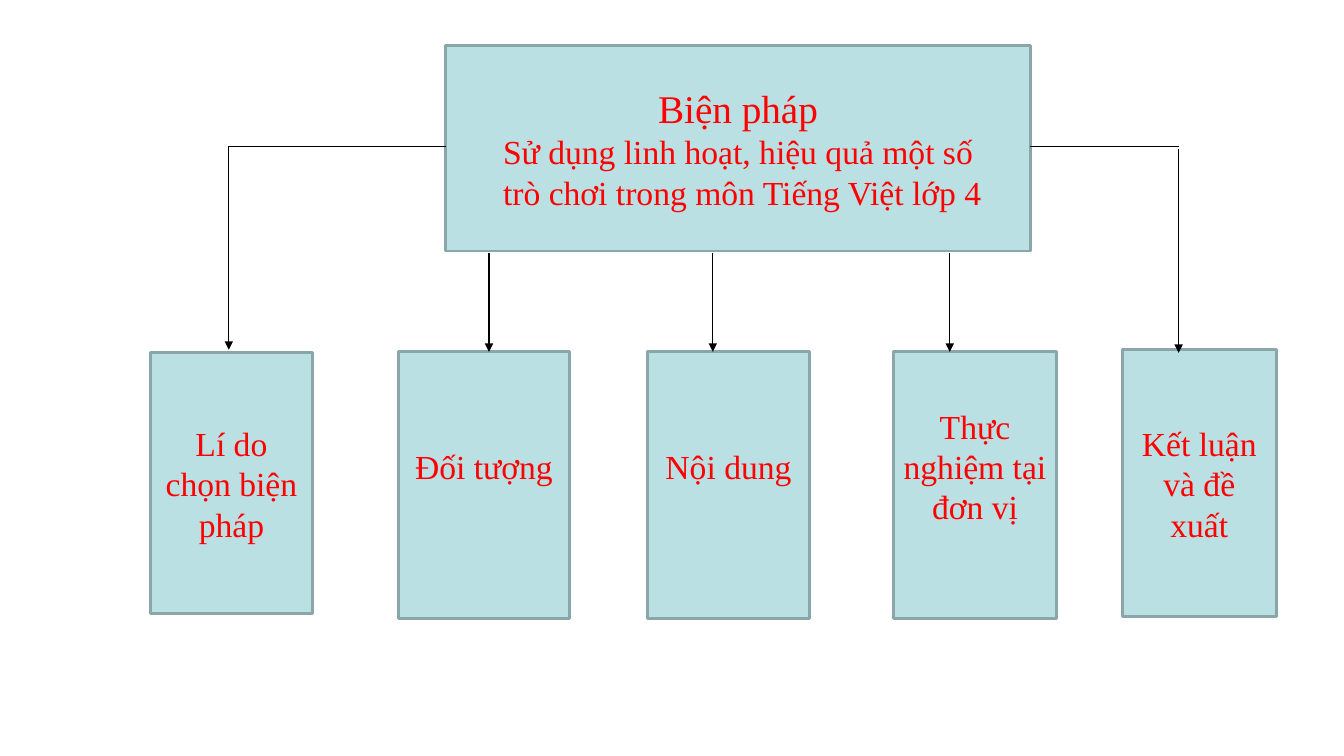
from dataclasses import dataclass

from lxml.etree import SubElement
from pptx import Presentation
from pptx.dml.color import RGBColor
from pptx.enum.shapes import MSO_CONNECTOR, MSO_SHAPE
from pptx.enum.text import MSO_ANCHOR, PP_ALIGN
from pptx.oxml.ns import qn
from pptx.util import Inches, Pt


@dataclass(frozen=True)
class Theme:
    font: str = "Times New Roman"
    fill: RGBColor = RGBColor(0xBB, 0xE0, 0xE3)
    border: RGBColor = RGBColor(0x8A, 0xA6, 0xA8)
    text: RGBColor = RGBColor(0xFF, 0x00, 0x00)
    arrow: RGBColor = RGBColor(0x00, 0x00, 0x00)
    heading_size: int = 28
    body_size: int = 24
    border_width: float = 2
    arrow_width: float = 0.75


class Diagram:
    def __init__(self, slide, theme):
        self.slide = slide
        self.theme = theme

    def box(self, left, top, width, height, lines, bottom_inset=0.05):
        shape = self.slide.shapes.add_shape(
            MSO_SHAPE.RECTANGLE,
            Inches(left), Inches(top), Inches(width), Inches(height),
        )
        shape.shadow.inherit = False
        shape.fill.solid()
        shape.fill.fore_color.rgb = self.theme.fill
        shape.line.color.rgb = self.theme.border
        shape.line.width = Pt(self.theme.border_width)
        text_frame = shape.text_frame
        text_frame.word_wrap = True
        text_frame.vertical_anchor = MSO_ANCHOR.MIDDLE
        text_frame.margin_bottom = Inches(bottom_inset)
        text_frame.text = "\n".join(text for text, size in lines)
        for paragraph, (text, size) in zip(text_frame.paragraphs, lines):
            paragraph.alignment = PP_ALIGN.CENTER
            for run in paragraph.runs:
                run.font.name = self.theme.font
                run.font.size = Pt(size)
                run.font.color.rgb = self.theme.text

    def line(self, start, end, arrowhead=False):
        connector = self.slide.shapes.add_connector(
            MSO_CONNECTOR.STRAIGHT,
            *(Inches(value) for value in (*start, *end)),
        )
        connector.line.color.rgb = self.theme.arrow
        connector.line.width = Pt(self.theme.arrow_width)
        properties = connector.element.spPr
        if arrowhead:
            SubElement(properties.find(qn("a:ln")), qn("a:tailEnd"), type="triangle")
        SubElement(properties, qn("a:effectLst"))


def main():
    presentation = Presentation()
    presentation.slide_width = Inches(13.33)
    presentation.slide_height = Inches(7.5)
    slide = presentation.slides.add_slide(presentation.slide_layouts[6])
    theme = Theme()
    diagram = Diagram(slide, theme)

    diagram.box(4.42, 0.45, 5.8, 2.04, [
        ("Biện pháp", theme.heading_size),
        ("Sử dụng linh hoạt, hiệu quả một số", theme.body_size),
        (" trò chơi trong môn Tiếng Việt lớp 4", theme.body_size),
    ])

    raised, centred = 0.43, 0.05
    topics = [
        ("Lí do chọn biện pháp", 1.49, 3.5, 1.61, 2.59, centred),
        ("Đối tượng", 3.95, 3.49, 1.7, 2.65, raised),
        ("Nội dung", 6.42, 3.49, 1.61, 2.65, raised),
        ("Thực nghiệm tại đơn vị", 8.86, 3.49, 1.62, 2.65, raised),
        ("Kết luận và đề xuất", 11.13, 3.47, 1.53, 2.65, centred),
    ]
    for text, left, top, width, height, bottom_inset in topics:
        diagram.box(left, top, width, height, [(text, theme.body_size)], bottom_inset)

    for x, start_y, end_y in [
        (2.27, 1.45, 3.47),
        (4.85, 2.51, 3.49),
        (7.07, 2.51, 3.49),
        (9.42, 2.51, 3.49),
        (11.69, 1.48, 3.5),
    ]:
        diagram.line((x, start_y), (x, end_y), arrowhead=True)
    for start_x, end_x in [(4.42, 2.27), (11.69, 10.22)]:
        diagram.line((start_x, 1.45), (end_x, 1.45))

    presentation.save("out.pptx")


if __name__ == "__main__":
    main()
